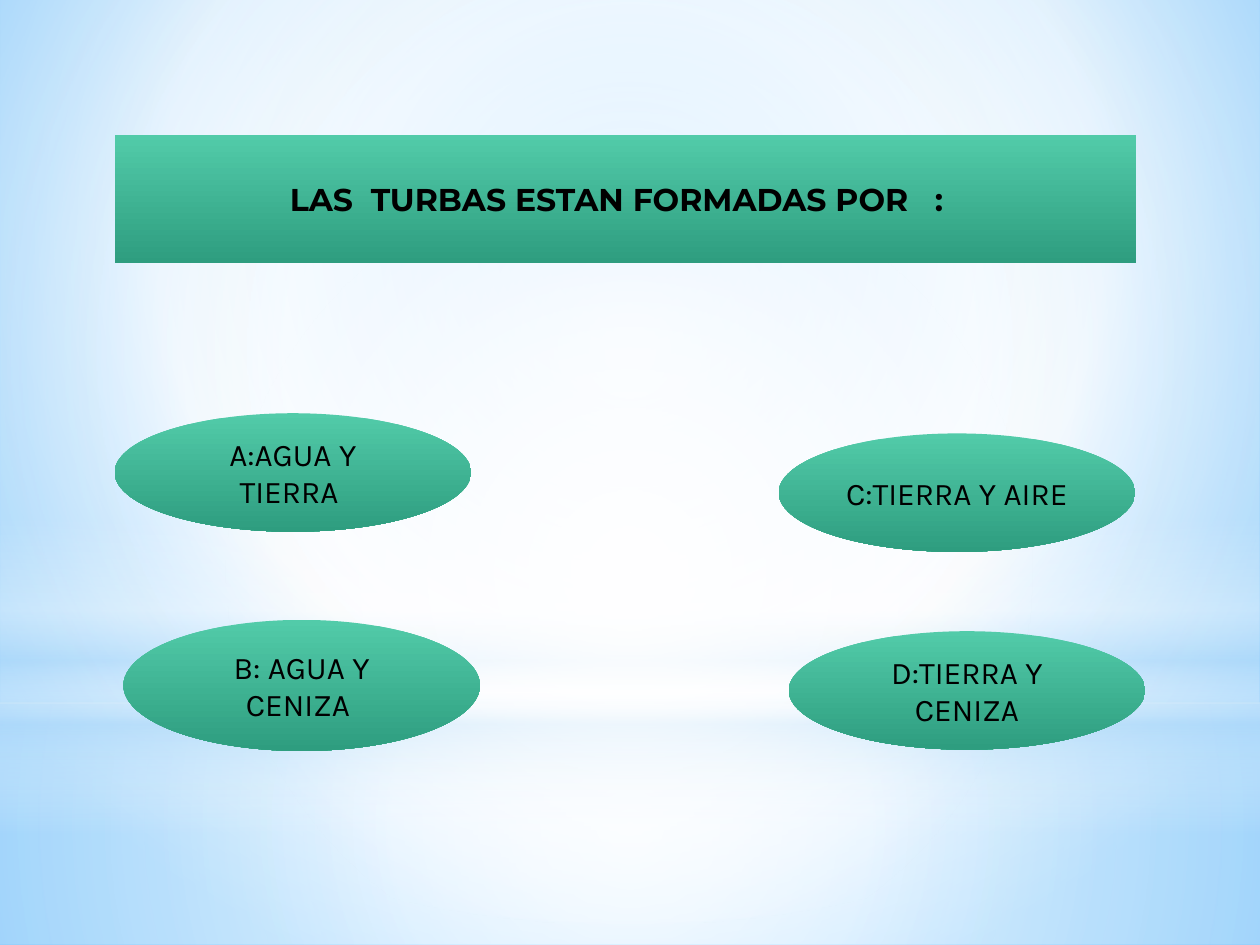
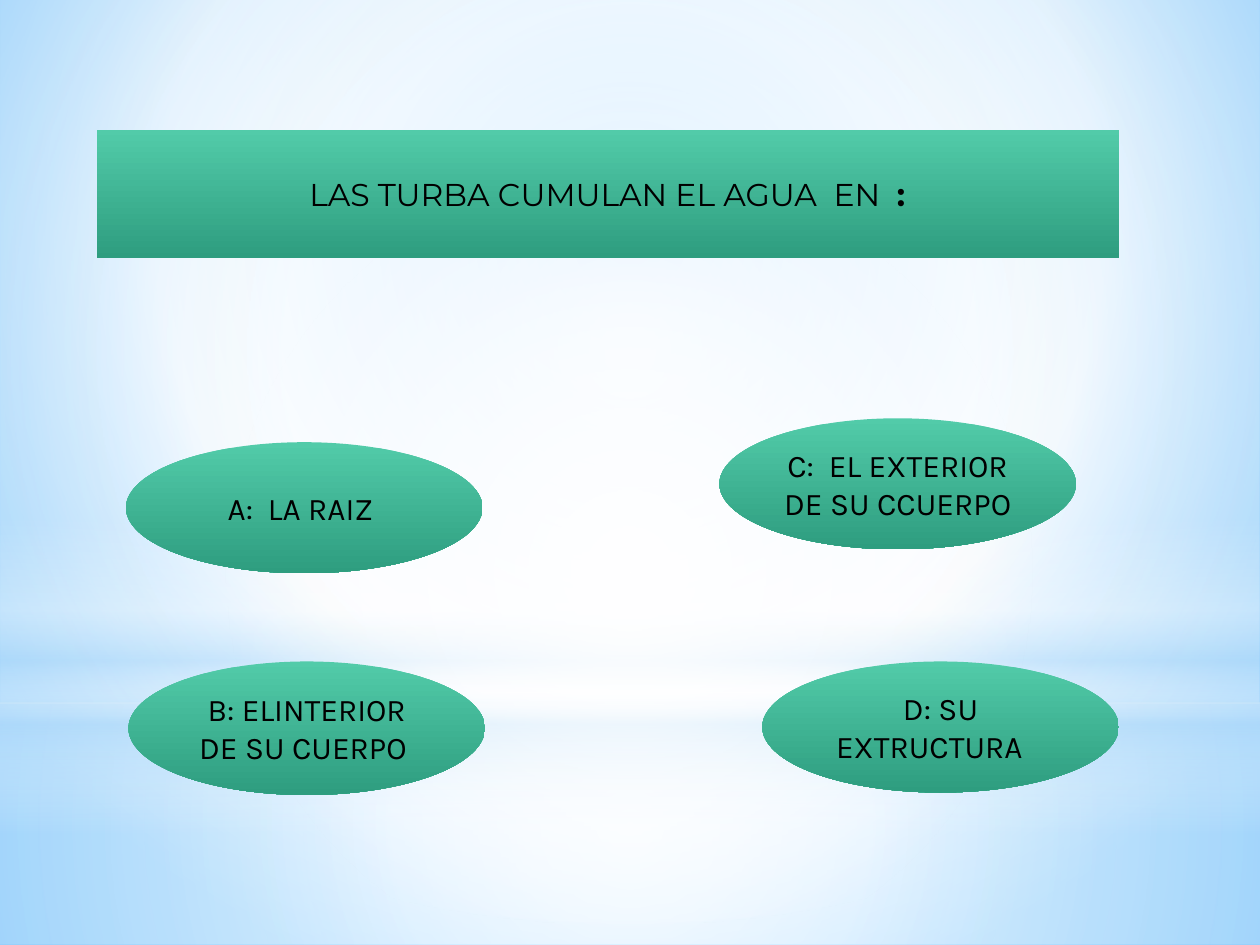
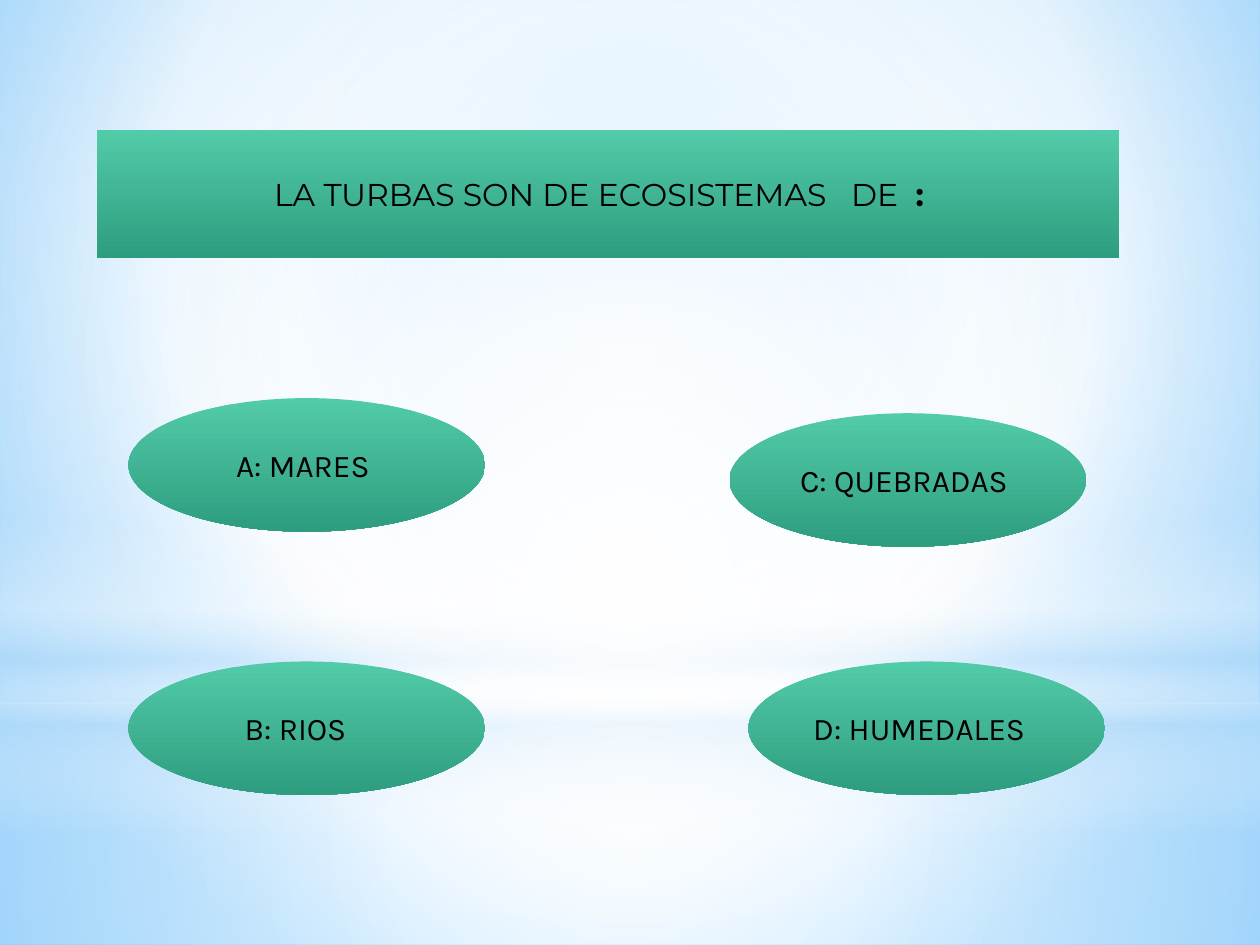
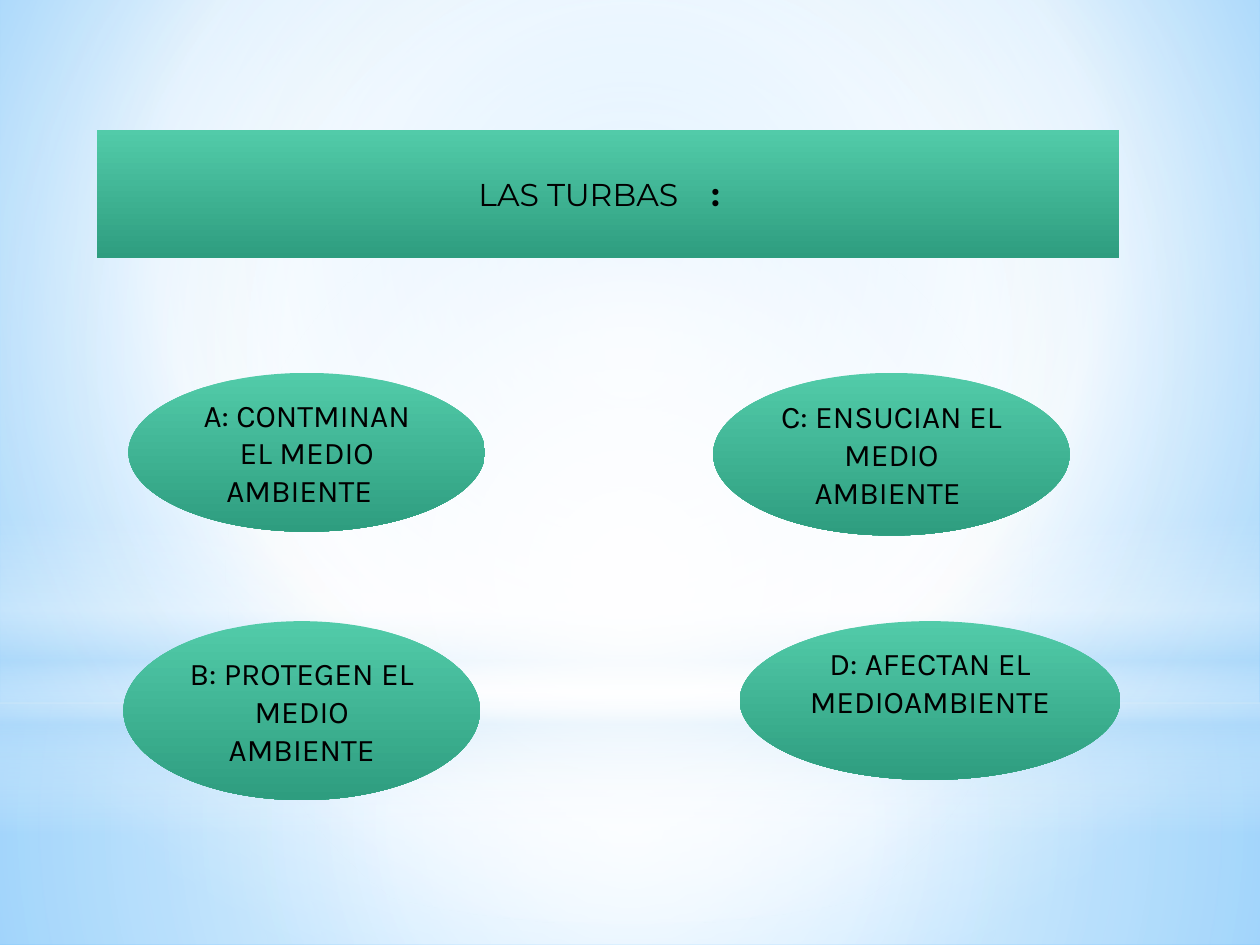
"""Build a four-question quiz about peat bogs."""
from dataclasses import dataclass

from lxml import etree
from pptx import Presentation
from pptx import util as u
from pptx.dml.color import RGBColor
from pptx.enum import shapes, text
from pptx.oxml.ns import qn


@dataclass(frozen=True)
class Theme:
    ink: str = "000000"
    green: tuple = ((0, "52CBA9", 100), (100, "2E9D7F", 100))
    sky: tuple = ((0, "9ED5FF", 100), (60, "FFFFFF", 100), (100, "5BB9FF", 100))
    ground: tuple = ((0, "FFFFFF", 91), (37, "FFFFFF", 76), (100, "B4DCFA", 79))
    air: tuple = ((0, "FFFFFF", 89), (48, "FFFFFF", 62), (100, "B4DCFA", 79))
    horizon: tuple = ((0, "FFFFFF", 0), (29, "FFFFFF", 30), (45, "B4DCFA", 40),
                      (55, "FFFFFF", 26), (65, "B4DCFA", 60), (100, "FFFFFF", 0))
    glow: tuple = ((0, "FFFFFF", 100), (56, "FFFFFF", 0))
    sky_focus: tuple = (20, 10, 20, 60)
    centre: tuple = (50, 50, 50, 50)
    question_font: str = "Montserrat"
    answer_font: str = "Karla"
    size: int = 18


class Quiz:
    COLUMNS, ROWS = 100, 75
    RECT, OVAL = shapes.MSO_SHAPE.RECTANGLE, shapes.MSO_SHAPE.OVAL

    def __init__(self, theme):
        self.theme = theme
        self.deck = Presentation()
        self.deck.slide_width, self.deck.slide_height = u.Inches(10), u.Inches(7.5)
        self.slide = None

    def box(self, left, top, width, height):
        column = self.deck.slide_width / self.COLUMNS
        row = self.deck.slide_height / self.ROWS
        return [round(n) for n in (left * column, top * row, width * column, height * row)]

    def gradient(self, fill, owner, stops, focus=None):
        fill.gradient()
        grad = owner.find(qn("a:gradFill"))
        for child in list(grad):
            grad.remove(child)
        stop_list = etree.SubElement(grad, qn("a:gsLst"))
        for position, colour, opacity in stops:
            stop = etree.SubElement(stop_list, qn("a:gs"), pos=str(position * 1000))
            rgb = etree.SubElement(stop, qn("a:srgbClr"), val=colour)
            if opacity < 100:
                etree.SubElement(rgb, qn("a:alpha"), val=str(opacity * 1000))
        if focus:
            circle = etree.SubElement(grad, qn("a:path"), {"path": "circle"})
            sides = {side: str(share * 1000) for side, share in zip("ltrb", focus)}
            etree.SubElement(circle, qn("a:fillToRect"), sides)
        else:
            etree.SubElement(grad, qn("a:lin"), ang="5400000", scaled="0")

    def shape(self, preset, place, stops, focus=None):
        figure = self.slide.shapes.add_shape(preset, *self.box(*place))
        figure.shadow.inherit = False
        figure.line.fill.background()
        self.gradient(figure.fill, figure.element.spPr, stops, focus)
        return figure

    def backdrop(self):
        theme, master = self.theme, self.deck.slide_master
        fill = master.background.fill
        sky = master.element.find(".//" + qn("p:bgPr"))
        self.gradient(fill, sky, theme.sky, theme.sky_focus)
        layers = (
            (self.RECT, (0, 55.8, 100, 19.2), theme.ground, theme.centre),
            (self.RECT, (0, 0, 100, 55.8), theme.air, theme.centre),
            (self.RECT, (0, 41.2, 100, 25), theme.horizon, None),
            (self.OVAL, (0, 17.5, 100, 55.8), theme.glow, theme.centre),
        )
        for depth, layer in enumerate(layers):
            element = self.shape(*layer).element
            element.nvSpPr.cNvPr.id = 20 + depth
            master.shapes.element.insert(2 + depth, element)

    def add_slide(self):
        self.slide = self.deck.slides.add_slide(self.deck.slide_layouts[5])

    def label(self, figure, runs, font):
        frame = figure.text_frame
        frame.word_wrap = True
        frame.auto_size = text.MSO_AUTO_SIZE.NONE
        frame.vertical_anchor = text.MSO_ANCHOR.MIDDLE
        paragraph = frame.paragraphs[0]
        paragraph.alignment = text.PP_ALIGN.CENTER
        paragraph.font.name = font
        paragraph.font.size = u.Pt(self.theme.size)
        paragraph.font.color.rgb = RGBColor.from_string(self.theme.ink)
        for words, bold in runs:
            run = paragraph.add_run()
            run.text = words
            if bold:
                run.font.bold = True

    def question(self, left, top, runs):
        banner = self.slide.shapes.title
        banner.left, banner.top, banner.width, banner.height = self.box(left, top, 81.1, 10.2)
        self.gradient(banner.fill, banner.element.spPr, self.theme.green)
        self.label(banner, runs, self.theme.question_font)

    def answer(self, words, left, top, height, width=28.3):
        bubble = self.shape(self.OVAL, (left, top, width, height), self.theme.green)
        self.label(bubble, [(words, False)], self.theme.answer_font)


QUESTIONS = (
    ((9.1, 10.7), [("LAS  TURBAS ESTAN FORMADAS POR   :  ", True)], (
        ("A:AGUA Y TIERRA ", 9.1, 32.8, 9.4),
        ("B: AGUA Y CENIZA ", 9.8, 49.2, 10.4),
        ("C:TIERRA Y AIRE ", 61.8, 34.4, 9.4),
        ("D:TIERRA Y CENIZA", 62.6, 50.1, 9.4))),
    ((7.7, 10.3), [("  LAS TURBA CUMULAN EL AGUA  EN  ", False), (":  ", True)], (
        ("A:  LA RAIZ ", 10, 35.1, 10.4),
        ("B: ELINTERIOR DE SU CUERPO ", 10.2, 52.5, 10.6),
        ("C:  EL EXTERIOR DE SU CCUERPO ", 57.1, 33.2, 10.4),
        ("D: SU EXTRUCTURA   ", 60.5, 52.5, 10.4))),
    ((7.7, 10.3), [("LA TURBAS SON DE ECOSISTEMAS   DE ", False), (" :  ", True)], (
        ("A: MARES ", 10.2, 31.6, 10.6),
        ("B: RIOS   ", 10.2, 52.5, 10.6),
        ("C: QUEBRADAS ", 57.9, 32.8, 10.6),
        ("D: HUMEDALES  ", 59.4, 52.5, 10.6))),
    ((7.7, 10.3), [("LAS TURBAS    ", False), (":  ", True)], (
        ("A: CONTMINAN EL MEDIO AMBIENTE  ", 10.2, 29.6, 12.6),
        ("B: PROTEGEN EL MEDIO AMBIENTE", 9.8, 49.3, 14.2),
        ("C: ENSUCIAN EL MEDIO AMBIENTE ", 56.6, 29.6, 12.9),
        ("D: AFECTAN EL MEDIOAMBIENTE  ", 58.7, 49.3, 12.6, 30.2))),
)


def main():
    quiz = Quiz(Theme())
    for number, (corner, runs, answers) in enumerate(QUESTIONS):
        quiz.add_slide()
        if number == 0:
            quiz.backdrop()
        quiz.question(*corner, runs)
        for answer in answers:
            quiz.answer(*answer)
    quiz.deck.save("out.pptx")


if __name__ == "__main__":
    main()
